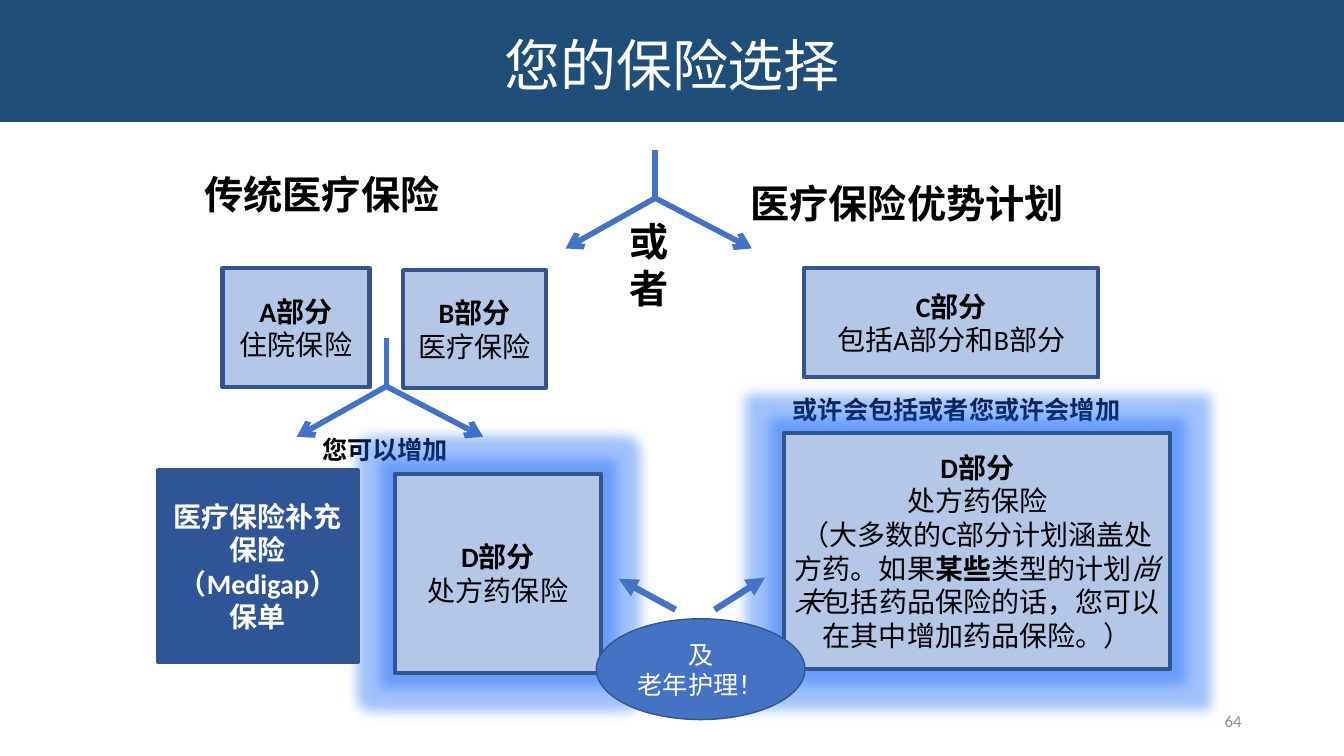
"""Build the slide comparing health insurance choices."""
import lxml.etree
import pptx
import pptx.dml.color
import pptx.enum.lang
import pptx.enum.shapes
import pptx.enum.text
import pptx.oxml.ns
import pptx.util

Pt = pptx.util.Pt
qn = pptx.oxml.ns.qn
SHAPE = pptx.enum.shapes.MSO_SHAPE
ALIGN = pptx.enum.text.PP_ALIGN
ANCHOR = pptx.enum.text.MSO_ANCHOR
CHINESE = pptx.enum.lang.MSO_LANGUAGE_ID.SIMPLIFIED_CHINESE


class ChoiceSlide:
    """Hold the style and the current slide, and draw its elements."""

    colours = {
        "banner": "1F4E79", "arrow": "4472C4", "part": "B4C7E7",
        "border": "325491", "supplement": "2F5597", "glow": "1466F6",
        "dark": "000000", "light": "FFFFFF", "number": "8C8C8C",
    }

    def __init__(self, deck):
        self.slide = deck.slides.add_slide(deck.slide_layouts[6])

    def colour(self, name):
        return pptx.dml.color.RGBColor.from_string(self.colours[name])

    def fill_text(self, holder, paragraphs, size, ink, font="Calibri",
                  align=ALIGN.CENTER, anchor=ANCHOR.MIDDLE, wrap=True):
        frame = holder.text_frame
        frame.word_wrap = wrap
        frame.vertical_anchor = anchor
        for index, pieces in enumerate(paragraphs):
            paragraph = frame.add_paragraph() if index else frame.paragraphs[0]
            paragraph.alignment = align
            for words, style in pieces:
                run = paragraph.add_run()
                run.text = words
                run.font.name = font
                run.font.size = Pt(size)
                run.font.bold = "b" in style
                run.font.italic = "i" in style
                run.font.color.rgb = self.colour(ink)
                run.font.language_id = CHINESE
        return frame

    def label(self, box, words, size, style="b", ink="dark", font="Arial",
              align=ALIGN.LEFT, anchor=ANCHOR.TOP, wrap=True):
        holder = self.slide.shapes.add_textbox(*map(Pt, box))
        self.fill_text(holder, [[(words, style)]], size, ink, font, align, anchor, wrap)

    def panel(self, box, paragraphs, fill="part", ink="dark", size=20,
              kind=SHAPE.RECTANGLE, border=3, font="Calibri", glow=False):
        shape = self.slide.shapes.add_shape(kind, *map(Pt, box))
        shape.shadow.inherit = False
        shape.fill.solid()
        shape.fill.fore_color.rgb = self.colour(fill)
        if border:
            shape.line.color.rgb = self.colour("border")
            shape.line.width = Pt(border)
        else:
            shape.line.fill.background()
        if glow:
            effects = shape._element.spPr.find(qn("a:effectLst"))
            halo = lxml.etree.SubElement(effects, qn("a:glow"), rad=str(Pt(18)))
            tint = lxml.etree.SubElement(
                halo, qn("a:srgbClr"), val=self.colours["glow"])
            lxml.etree.SubElement(tint, qn("a:alpha"), val="40000")
        return self.fill_text(shape, paragraphs, size, ink, font)

    def arrow(self, start, end, head=None, width=4):
        line = self.slide.shapes.add_connector(
            pptx.enum.shapes.MSO_CONNECTOR.STRAIGHT, *map(Pt, start + end))
        line.line.color.rgb = self.colour("arrow")
        line.line.width = Pt(width)
        properties = line._element.spPr
        if head:
            lxml.etree.SubElement(
                properties.find(qn("a:ln")), qn("a:tailEnd"), type=head)
        lxml.etree.SubElement(properties, qn("a:effectLst"))

    def fork(self, x, y):
        for reach in (-64, 69):
            self.arrow((x, y), (x + reach, y + 36), "arrow")
        self.arrow((x, y - 34.5), (x, y))


def part(letter, coverage):
    return [[(letter + "部分", "b")], [(coverage, "")]]


def main():
    deck = pptx.Presentation()
    deck.slide_width, deck.slide_height = Pt(960), Pt(540)
    page = ChoiceSlide(deck)

    title = page.panel((0, 0, 960, 87), [[("您的保险选择", "")]], "banner",
                       "light", 40, border=0, font="Arial")
    title.margin_top = Pt(8)

    page.fork(276, 276)
    page.label((139, 118, 253, 41), "传统医疗保险", 28)
    page.panel((159, 191.5, 105, 85), part("A", "住院保险"))
    page.panel((288, 193, 102, 84), part("B", "医疗保险"))
    page.label((223, 307, 105, 29), "您可以增加", 18, wrap=False)
    page.panel((282, 338.5, 147.5, 142), part("D", "处方药保险"), glow=True)
    page.panel((113, 336, 142.5, 137),
               [[("医疗保险补充保险（Medigap）保单", "b")]], "supplement", "light")

    page.label((431, 152, 66, 41), "或者", 28, align=ALIGN.CENTER)

    page.label((529, 124.5, 360, 41), "医疗保险优势计划", 28)
    page.panel((574.5, 191.5, 210, 78), part("C", "包括A部分和B部分"))
    page.label((551.5, 278, 263.5, 29), "或许会包括或者您或许会增加", 18,
               align=ALIGN.CENTER)
    drug_note = [
        ("（大多数的C部分计划涵盖处方药。如果", ""), ("某些", "b"),
        ("类型的计划", ""), ("尚未", "i"),
        ("包括药品保险的话，您可以在其中增加药品保险。）", ""),
    ]
    page.panel((560, 309.5, 276, 168.5),
               part("D", "处方药保险") + [drug_note], glow=True)
    page.fork(468, 141.5)

    page.label((678, 500.5, 216, 29), "64", 12, "", "number", "Calibri",
               ALIGN.RIGHT, ANCHOR.MIDDLE)
    page.panel((426, 442, 149, 72), [[("及", "")], [("老年护理！", "")]],
               "arrow", "light", 18, SHAPE.OVAL, 1)
    page.arrow((482.5, 435.5), (442, 413.5), "triangle", 4.5)
    page.arrow((510.5, 435.5), (546.5, 412.5), "triangle", 4.5)

    deck.save("out.pptx")


if __name__ == "__main__":
    main()
